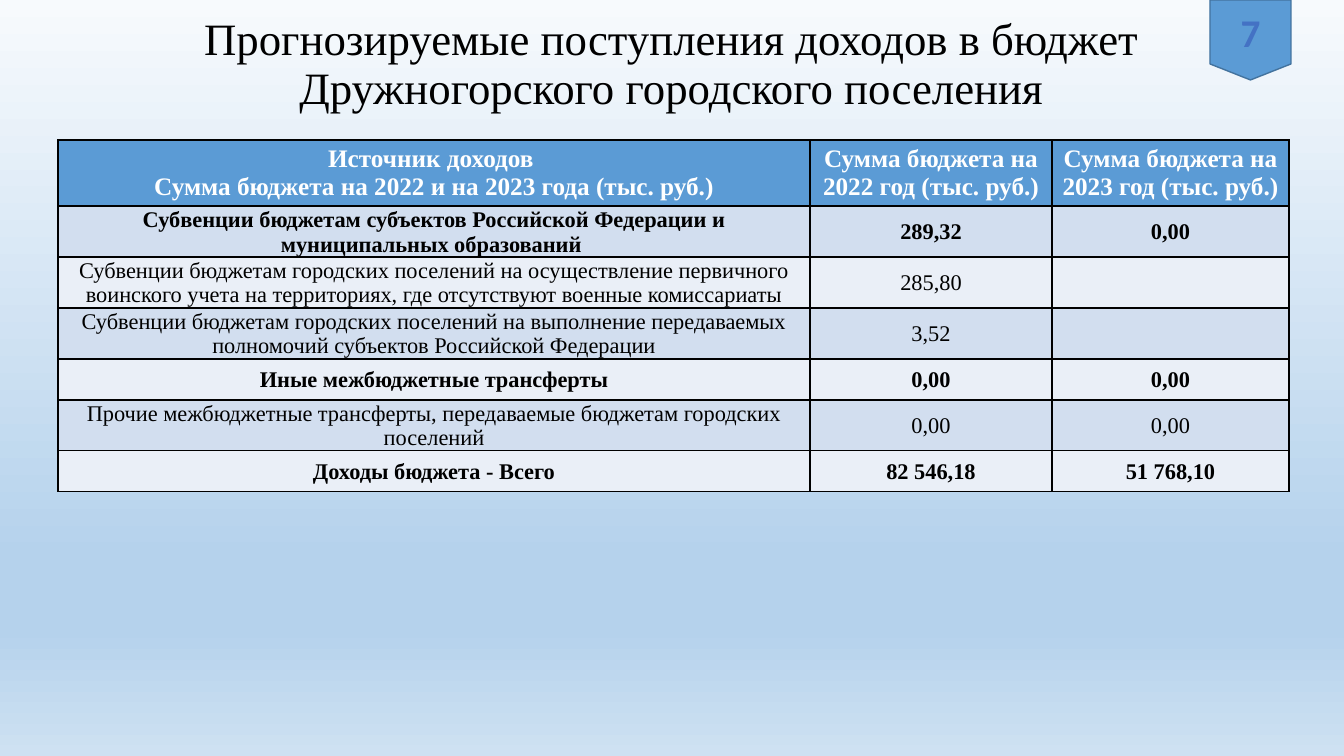
from lxml.etree import SubElement
from pptx import Presentation
from pptx.dml.color import RGBColor
from pptx.enum.shapes import MSO_SHAPE as Shape
from pptx.enum.text import MSO_ANCHOR as Anchor, MSO_AUTO_SIZE as AutoSize, PP_ALIGN as Align
from pptx.oxml.ns import qn
from pptx.util import Inches, Pt

SCALE = Inches(7.5) / 756
SERIF = "Times New Roman"
BLACK = RGBColor(0x00, 0x00, 0x00)
WHITE = RGBColor(0xFF, 0xFF, 0xFF)
BLUE = RGBColor(0x5B, 0x9B, 0xD5)
BADGE_LINE = RGBColor(0x43, 0x73, 0x9E)
BADGE_TEXT = RGBColor(0x44, 0x72, 0xC4)
BANDS = (RGBColor(0xD2, 0xDE, 0xEF), RGBColor(0xEA, 0xEF, 0xF7))
SKY = (
    (0, RGBColor(0xF7, 0xFA, 0xFD)),
    (74, RGBColor(0xB5, 0xD2, 0xEC)),
    (83, RGBColor(0xB5, 0xD2, 0xEC)),
    (100, RGBColor(0xCE, 0xE1, 0xF2)),
)

TITLE = "Прогнозируемые поступления доходов в бюджет Дружногорского городского поселения"
HEADERS = (
    ("Источник доходов ", "Сумма бюджета на 2022 и на 2023 года (тыс. руб.)"),
    ("Сумма бюджета на 2022 год (тыс. руб.)",),
    ("Сумма бюджета на 2023 год (тыс. руб.)",),
)
INCOMES = (
    (True, 51, "Субвенции бюджетам субъектов Российской Федерации и муниципальных образований ",
     "289,32", "0,00"),
    (False, 51, "Субвенции бюджетам городских поселений на осуществление первичного воинского учета "
     "на территориях, где отсутствуют военные комиссариаты", "285,80", ""),
    (False, 51, "Субвенции бюджетам городских поселений на выполнение передаваемых полномочий "
     "субъектов Российской Федерации", "3,52", ""),
    (True, 41, "Иные межбюджетные трансферты", "0,00", "0,00"),
    (False, 50, "Прочие межбюджетные трансферты, передаваемые бюджетам городских поселений",
     "0,00", "0,00"),
    (True, 41, "Доходы бюджета - Всего", "82 546,18", "51 768,10"),
)
COLUMNS = (752, 242, 237)
HEADER_HEIGHT = 66


def px(length):
    return round(length * SCALE)


def write(para, text, size, color, bold=False, font=SERIF):
    para.alignment = Align.CENTER
    span = para.add_run()
    span.text = text
    span.font.name = font
    span.font.size = Pt(size)
    span.font.bold = bold
    span.font.color.rgb = color


def paint_background(page):
    fill = page.background.fill
    fill.gradient()
    fill.gradient_angle = 270
    stops = page.element.find(".//" + qn("a:gsLst"))
    for stop in list(stops):
        stops.remove(stop)
    for position, color in SKY:
        stop = SubElement(stops, qn("a:gs"), pos=str(position * 1000))
        SubElement(stop, qn("a:srgbClr"), val=str(color))


def add_title(page):
    title = page.shapes.title
    title.left, title.top, title.width, title.height = px(92), 0, px(1159), px(119)
    frame = title.text_frame
    frame.word_wrap = True
    frame.auto_size = AutoSize.NONE
    frame.vertical_anchor = Anchor.BOTTOM
    para = frame.paragraphs[0]
    para.line_spacing = 0.9
    write(para, TITLE, 32, BLACK)


def add_borders(cell):
    properties = cell._tc.get_or_add_tcPr()
    for index, side in enumerate(("lnL", "lnR", "lnT", "lnB")):
        line = SubElement(properties, qn("a:" + side), w=str(Pt(1)))
        fill = SubElement(line, qn("a:solidFill"))
        SubElement(fill, qn("a:srgbClr"), val=str(BLACK))
        properties.insert(index, line)


def fill_cell(cell, lines, size, color, bold, background):
    cell.vertical_anchor = Anchor.MIDDLE
    cell.fill.solid()
    cell.fill.fore_color.rgb = background
    add_borders(cell)
    frame = cell.text_frame
    for index, text in enumerate(lines):
        para = frame.add_paragraph() if index else frame.paragraphs[0]
        if text:
            write(para, text, size, color, bold)


def add_income_table(page):
    heights = [HEADER_HEIGHT] + [income[1] for income in INCOMES]
    table = page.shapes.add_table(len(heights), len(COLUMNS), px(58), px(140),
                                  px(sum(COLUMNS)), px(sum(heights))).table
    for column, width in zip(table.columns, COLUMNS):
        column.width = px(width)
    for row, height in zip(table.rows, heights):
        row.height = px(height)
    for column, lines in enumerate(HEADERS):
        fill_cell(table.cell(0, column), lines, 18, WHITE, True, BLUE)
    for row, (bold, _, *texts) in enumerate(INCOMES, 1):
        for column, text in enumerate(texts):
            cell = table.cell(row, column)
            cell.margin_left = cell.margin_right = cell.margin_top = px(1)
            cell.margin_bottom = 0
            fill_cell(cell, (text,), 16, BLACK, bold, BANDS[(row - 1) % 2])


def add_page_badge(page):
    badge = page.shapes.add_shape(Shape.FLOWCHART_OFFPAGE_CONNECTOR,
                                  px(1210), 0, px(81), px(80))
    badge.shadow.inherit = False
    badge.fill.solid()
    badge.fill.fore_color.rgb = BLUE
    badge.line.color.rgb = BADGE_LINE
    badge.line.width = Pt(1)
    frame = badge.text_frame
    frame.vertical_anchor = Anchor.MIDDLE
    write(frame.paragraphs[0], "7", 28, BADGE_TEXT, True, "Calibri")


def main():
    deck = Presentation()
    deck.slide_width, deck.slide_height = px(1344), px(756)
    page = deck.slides.add_slide(deck.slide_layouts[5])
    paint_background(page)
    add_title(page)
    add_income_table(page)
    add_page_badge(page)
    deck.save("out.pptx")


if __name__ == "__main__":
    main()
